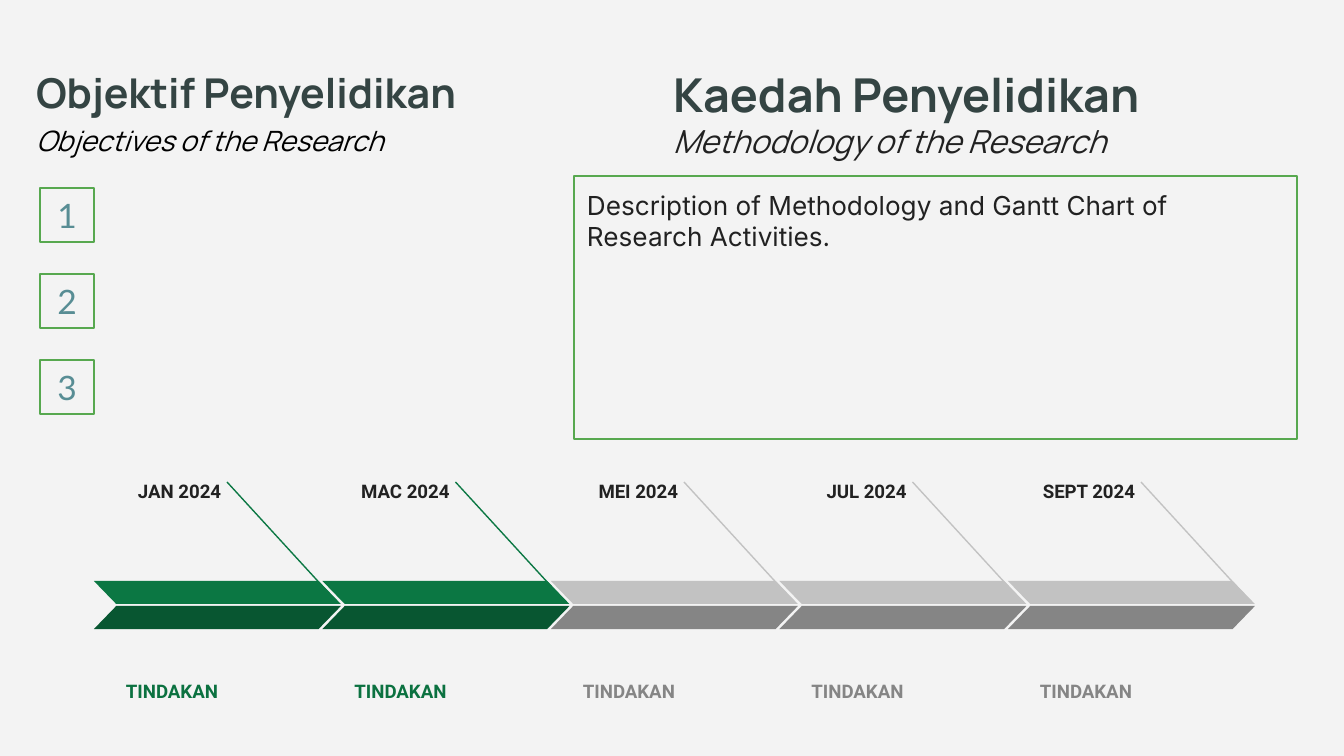
from pptx import Presentation
from pptx.util import Emu, Pt
from pptx.dml.color import RGBColor
from pptx.enum.shapes import MSO_SHAPE, MSO_CONNECTOR
from pptx.enum.text import PP_ALIGN, MSO_ANCHOR, MSO_AUTO_SIZE
from pptx.oxml.ns import qn
from lxml.etree import SubElement

# Content
INK, DARK, EDGE, TEAL = "212121", "344443", "57A84F", "588D94"
DONE = ("0B7743", "085631", "0B7140")  # upper bar, lower bar, label
NEXT = ("C2C2C2", "858585", "858585")
HEADS = [
    # box, anchor, (text, size, colour, bold, align, spacing)
    ((23, 54, 551, 118), MSO_ANCHOR.TOP, [
        ("Objektif Penyelidikan", 24, DARK, True, PP_ALIGN.LEFT, 1.0),
        ("Objectives of the Research", 16, "000000", False,
         PP_ALIGN.JUSTIFY, 1.5)]),
    ((660, 51, 551, 122), MSO_ANCHOR.BOTTOM, [
        ("Kaedah Penyelidikan", 25, DARK, True, PP_ALIGN.LEFT, 1.0),
        ("Methodology of the Research", 17, INK, False,
         PP_ALIGN.LEFT, 1.0)]),
]
BODY = "Description of Methodology and Gantt Chart of Research Activities."
GOALS = ["1", "2", "3"]
STEPS = [
    ("JAN 2024", "TINDAKAN", DONE),
    ("MAC 2024", "TINDAKAN", DONE),
    ("MEI 2024", "TINDAKAN", NEXT),
    ("JUL 2024", "TINDAKAN", NEXT),
    ("SEPT 2024", "TINDAKAN", NEXT),
]
SCALE = 914400 / 134.4
PAD = 13
GAP, PITCH = 86, 228.5


def px(n):
    return Emu(round(n * SCALE))


def rgb(code):
    return RGBColor.from_string(code)


def setup(shape, anchor):
    frame = shape.text_frame
    frame.word_wrap = True
    frame.vertical_anchor = anchor
    frame.margin_left = frame.margin_right = px(PAD)
    frame.margin_top = frame.margin_bottom = px(PAD)
    return frame


def write(para, text, face, size, color, bold=False, align=PP_ALIGN.LEFT,
          space=1.0):
    para.text = text
    para.alignment = align
    para.line_spacing = space
    font = para.font
    font.name, font.size, font.bold = face, Pt(size), bold
    font.color.rgb = rgb(color)


def label(shapes, box, text, color, anchor, align):
    area = shapes.add_textbox(*map(px, box))
    write(setup(area, anchor).paragraphs[0], text, "Roboto", 10, color,
          True, align, 1.15)


def frame_box(shapes, box, anchor):
    rect = shapes.add_shape(MSO_SHAPE.RECTANGLE, *map(px, box))
    rect.shadow.inherit = False
    rect.fill.background()
    rect.line.color.rgb = rgb(EDGE)
    rect.line.width = Pt(0.75)
    return setup(rect, anchor).paragraphs[0]


def bar(shapes, x, y, color, flip):
    part = shapes.add_shape(MSO_SHAPE.PARALLELOGRAM,
                            *map(px, (x, y, 247, 23)))
    part.shadow.inherit = False
    part.adjustments[0] = 0.97
    part.fill.solid()
    part.fill.fore_color.rgb = rgb(color)
    part.line.fill.background()
    if flip:
        part._element.spPr.find(qn("a:xfrm")).set("flipH", "1")


def stem(shapes, x, color):
    line = shapes.add_connector(MSO_CONNECTOR.STRAIGHT,
                                *map(px, (x, 482, x + 110, 602)))
    line.line.color.rgb = rgb(color)
    line.line.width = Pt(0.75)
    SubElement(line._element.spPr, qn("a:effectLst"))


deck = Presentation()
deck.slide_width, deck.slide_height = px(1344), px(756)
slide = deck.slides.add_slide(deck.slide_layouts[6])
slide.background.fill.solid()
slide.background.fill.fore_color.rgb = rgb("F3F3F3")
shapes = slide.shapes

# Headings, each with an italic translation below
for box, anchor, rows in HEADS:
    frame = setup(shapes.add_textbox(*map(px, box)), anchor)
    frame.auto_size = MSO_AUTO_SIZE.TEXT_TO_FIT_SHAPE
    for i, (text, *style) in enumerate(rows):
        para = frame.add_paragraph() if i else frame.paragraphs[0]
        write(para, text, "Manrope", *style)
        para.font.italic = i > 0

# Methodology box
write(frame_box(shapes, (574, 176, 723, 263), MSO_ANCHOR.TOP),
      BODY, "Inter", 14, INK)

# Numbered objectives
for i, goal in enumerate(GOALS):
    para = frame_box(shapes, (40, 188 + i * GAP, 54, 54), MSO_ANCHOR.MIDDLE)
    write(para, goal, "Lato", 18, TEAL, align=PP_ALIGN.CENTER)

# Timeline, one group per step
for i, (date, task, (upper, lower, tone)) in enumerate(STEPS):
    x = 94 + i * PITCH
    group = shapes.add_group_shape().shapes
    stem(group, x + 133, upper)
    bar(group, x, 581, upper, True)
    bar(group, x, 606, lower, False)
    label(group, (x + 19, 644, 203, 71), task, tone,
          MSO_ANCHOR.BOTTOM, PP_ALIGN.LEFT)
    label(group, (x + 18, 464, 122, 39), date, INK,
          MSO_ANCHOR.TOP, PP_ALIGN.RIGHT)

deck.save("out.pptx")
